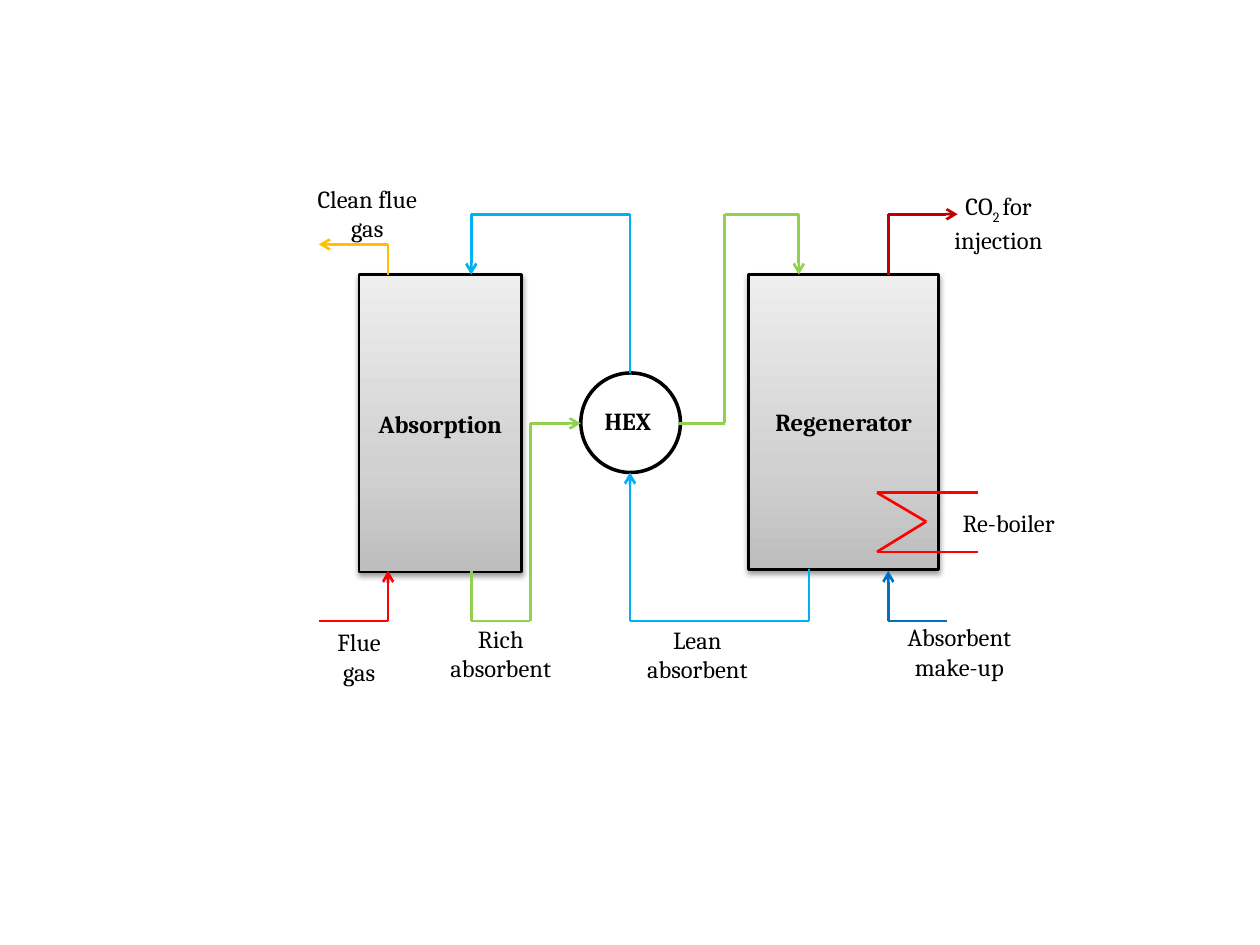
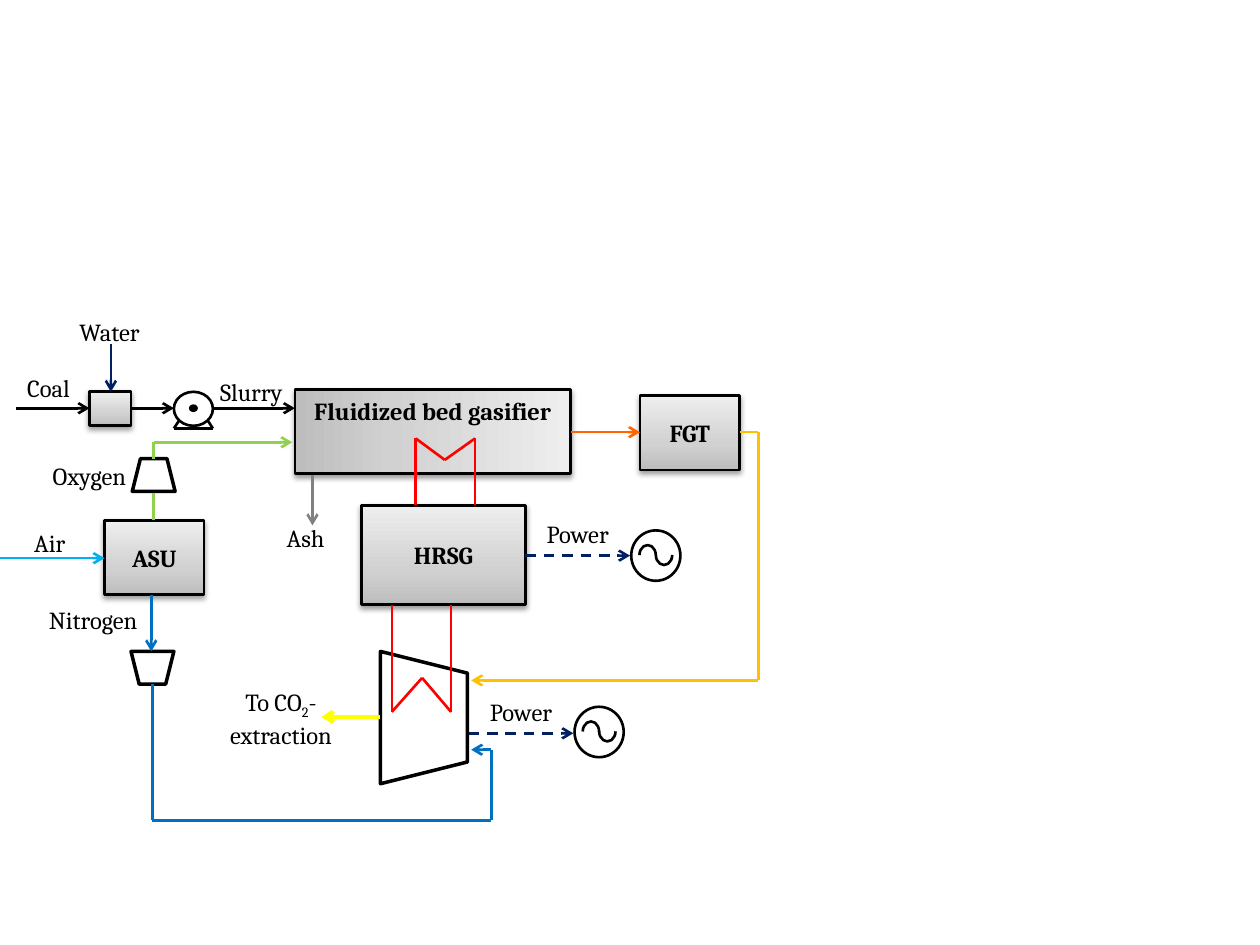
import lxml.etree
import pptx
import pptx.dml.color
import pptx.enum.dml
import pptx.enum.shapes
import pptx.enum.text
import pptx.oxml.ns
import pptx.util

PX = 9144  # 100 px to the inch
FONT, SIZE = "Cambria", 14
COLORS = {
    "black": "000000", "white": "FFFFFF", "red": "FF0000", "gold": "FFC000",
    "sky": "00B0F0", "green": "92D050", "blue": "0070C0", "wine": "C00000",
    "navy": "002060", "gray": "808080", "orange": "FF6600", "yellow": "FFFF00",
}
SHADES = [(0, "BDBDBD"), (35, "D1D1D1"), (100, "EEEEEE")]
KIND = pptx.enum.shapes.MSO_SHAPE
ALIGN = pptx.enum.text.PP_ALIGN
ANCHOR = pptx.enum.text.MSO_ANCHOR

# boxes: text, (left, top, width, height), shade angle, anchor
# parts: kind, (left, top, width, height), turn, line width, fill
# pipes: colour, style, points
# labels: runs (those starting with "_" are subscripts), (left, top, width, height)
CAPTURE = {
    "boxes": [
        ("Absorption", (285, 218, 129, 236), 90, ANCHOR.MIDDLE),
        ("Regenerator", (594, 218, 151, 234), 90, ANCHOR.MIDDLE),
    ],
    "parts": [(KIND.OVAL, (461, 296, 79, 79), 0, 2, "white")],
    "waves": [],
    "pipes": [
        ("red", "arrow", [(253, 493), (308, 493), (308, 453)]),
        ("gold", "arrow", [(308, 218), (308, 194), (253, 194)]),
        ("sky", "arrow", [(500, 296), (500, 170), (374, 170), (374, 218)]),
        ("sky", "arrow", [(642, 452), (642, 493), (500, 493), (500, 375)]),
        ("green", "arrow", [(374, 453), (374, 493), (421, 493), (421, 336), (461, 336)]),
        ("green", "arrow", [(539, 336), (575, 336), (575, 170), (634, 170), (634, 218)]),
        ("blue", "arrow", [(752, 493), (705, 493), (705, 453)]),
        ("wine", "arrow", [(705, 218), (705, 170), (760, 170)]),
        ("red", "plain", [(776, 438), (696, 438), (735, 414), (696, 391), (776, 391)]),
    ],
    "labels": [
        (["Flue gas"], (244, 493, 82, 57)),
        (["Clean flue gas"], (241, 141, 101, 57)),
        (["Rich absorbent"], (341, 490, 113, 57)),
        (["Lean absorbent"], (497, 491, 113, 57)),
        (["Absorbent make-up"], (705, 489, 113, 57)),
        (["CO", "_2 ", "for injection"], (736, 147, 113, 57)),
        (["Re-boiler"], (744, 398, 113, 34)),
    ],
    "hub": ("HEX", (470, 317, 83, 34)),
}
POWER = {
    "boxes": [
        ("Fluidized bed gasifier", (234, 309, 219, 67), 0, ANCHOR.TOP),
        ("FGT", (508, 314, 79, 59), 90, ANCHOR.MIDDLE),
        ("HRSG", (287, 401, 130, 79), 90, ANCHOR.MIDDLE),
        ("ASU", (83, 413, 79, 59), 90, ANCHOR.MIDDLE),
        ("", (71, 311, 33, 27), 90, ANCHOR.MIDDLE),
    ],
    "parts": [
        (KIND.TRAPEZOID, (105, 364, 34, 26), 0, 2, "white"),
        (KIND.TRAPEZOID, (104, 517, 34, 26), 180, 2, "white"),
        (KIND.TRAPEZOID, (284, 535, 105, 69), 90, 2, "white"),
        (KIND.OVAL, (138, 311, 31, 27), 0, 1.5, "white"),
        (KIND.FLOWCHART_CONNECTOR, (151, 322, 5, 4), 0, 1.5, "black"),
    ],
    "waves": [(501, 421), (456, 561)],
    "pipes": [
        ("sky", "arrow", [(0, 443), (83, 443)]),
        ("black", "arrow", [(13, 324), (71, 324)]),
        ("black", "arrow", [(104, 324), (138, 324)]),
        ("black", "arrow", [(169, 324), (234, 324)]),
        ("black", "plain", [(142, 334), (138, 340), (169, 340), (165, 334)]),
        ("navy", "arrow", [(88, 273), (88, 311)]),
        ("gray", "arrow", [(248, 377), (248, 417)]),
        ("orange", "arrow", [(453, 343), (508, 343)]),
        ("gold", "arrow", [(587, 343), (602, 343), (602, 540), (374, 540)]),
        ("navy", "dash", [(417, 441), (500, 441)]),
        ("navy", "dash", [(372, 582), (455, 582)]),
        ("green", "plain", [(122, 413), (122, 391)]),
        ("green", "arrow", [(122, 364), (122, 351), (232, 351)]),
        ("blue", "arrow", [(120, 472), (120, 517)]),
        ("blue", "arrow", [(121, 543), (121, 651), (390, 651), (390, 595), (374, 595)]),
        ("yellow", "thick", [(302, 569), (255, 569)]),
        ("red", "plain", [(330, 401), (330, 348), (353, 365), (377, 348), (377, 401)]),
        ("red", "plain", [(311, 480), (311, 565), (335, 538), (358, 565), (358, 480)]),
    ],
    "labels": [
        (["Coal"], (5, 291, 67, 34)),
        (["Air"], (6, 414, 67, 34)),
        (["Power"], (421, 407, 75, 34)),
        (["Power"], (376, 548, 75, 34)),
        (["Water"], (46, 247, 82, 34)),
        (["Oxygen"], (30, 361, 82, 34)),
        (["Ash"], (209, 410, 67, 34)),
        (["Slurry"], (163, 294, 73, 34)),
        (["To CO", "_2", "-extraction"], (169, 540, 108, 57)),
        (["Nitrogen"], (20, 475, 108, 34)),
    ],
    "hub": None,
}


def rgb(name):
    return pptx.dml.color.RGBColor.from_string(COLORS[name])


def scale(nums):
    return [num * PX for num in nums]


def add_node(root, tag, **attrs):
    return lxml.etree.SubElement(root, pptx.oxml.ns.qn(tag), attrs)


def add_tint(root, hue):
    return add_node(root, "a:srgbClr", val=hue)


def write(frame, runs, bold=False, align=ALIGN.CENTER):
    """Fill the frame with one paragraph; runs marked "_" become subscripts."""
    frame.word_wrap = True
    para = frame.paragraphs[0]
    para.alignment = align
    for text in runs:
        run = para.add_run()
        run.text = text.lstrip("_")
        font = run.font
        font.name, font.size, font.bold = FONT, pptx.util.Pt(SIZE), bold
        font.color.rgb = rgb("black")
        if text.startswith("_"):
            run.font._element.set("baseline", "-25000")


def add_part(slide, kind, area, turn=0, width=1.5, fill=None):
    part = slide.shapes.add_shape(kind, *scale(area))
    part.rotation = turn
    if fill:
        part.fill.solid()
        part.fill.fore_color.rgb = rgb(fill)
    else:
        part.fill.background()
    part.line.color.rgb = rgb("black")
    part.line.width = pptx.util.Pt(width)
    part.shadow.inherit = False
    return part


def add_box(slide, text, area, angle, anchor):
    """Add a shaded, shadowed unit with its name in bold."""
    box = add_part(slide, KIND.RECTANGLE, area)
    box.fill.gradient()
    box.fill.gradient_angle = angle
    props = box.element.spPr
    stops = props.find(".//" + pptx.oxml.ns.qn("a:gsLst"))
    for stop in list(stops):
        stops.remove(stop)
    for place, hue in SHADES:
        add_tint(add_node(stops, "a:gs", pos=str(place * 1000)), hue)
    glow = add_node(props.find(pptx.oxml.ns.qn("a:effectLst")), "a:outerShdw",
                    blurRad="40000", dist="20000", dir="5400000", rotWithShape="0")
    add_node(add_tint(glow, COLORS["black"]), "a:alpha", val="38000")
    if text:
        box.text_frame.vertical_anchor = anchor
        write(box.text_frame, [text], bold=True)


def add_wave(slide, left, top):
    """Add a generator: a circle around two half arcs that form a sine."""
    add_part(slide, KIND.OVAL, (left, top, 39, 40), fill="white")
    for step, turn in ((5, 270), (18, 90)):
        arc = add_part(slide, KIND.ARC, (left + step, top + 13, 16, 13), turn)
        arc.adjustments[0], arc.adjustments[1] = 162, 54.72


def add_pipe(slide, hue, style, points):
    """Join the points by straight lines; all but plain pipes end in an arrow."""
    for start, end in zip(points, points[1:]):
        pipe = slide.shapes.add_connector(
            pptx.enum.shapes.MSO_CONNECTOR.STRAIGHT, *scale(start + end))
        pipe.line.color.rgb = rgb(hue)
        pipe.line.width = pptx.util.Pt(2.25 if style == "thick" else 1.5)
        if style == "dash":
            pipe.line.dash_style = pptx.enum.dml.MSO_LINE.DASH
        add_node(pipe._element.spPr, "a:effectLst")
    if style != "plain":
        add_node(pipe.line._get_or_add_ln(), "a:tailEnd", type="arrow")


def add_label(slide, runs, area, **looks):
    frame = slide.shapes.add_textbox(*scale(area)).text_frame
    write(frame, runs, **looks)
    frame.auto_size = pptx.enum.text.MSO_AUTO_SIZE.SHAPE_TO_FIT_TEXT
    return frame


def draw(deck, chart):
    slide = deck.slides.add_slide(deck.slide_layouts[6])
    for box in chart["boxes"]:
        add_box(slide, *box)
    for part in chart["parts"]:
        add_part(slide, *part)
    for wave in chart["waves"]:
        add_wave(slide, *wave)
    for pipe in chart["pipes"]:
        add_pipe(slide, *pipe)
    for label in chart["labels"]:
        add_label(slide, *label)
    if chart["hub"]:
        text, area = chart["hub"]
        frame = add_label(slide, [text], area, bold=True, align=ALIGN.LEFT)
        frame.vertical_anchor = ANCHOR.MIDDLE


def main():
    deck = pptx.Presentation()
    deck.slide_width, deck.slide_height = scale((1000, 750))
    for chart in (CAPTURE, POWER):
        draw(deck, chart)
    deck.save("out.pptx")


if __name__ == "__main__":
    main()
